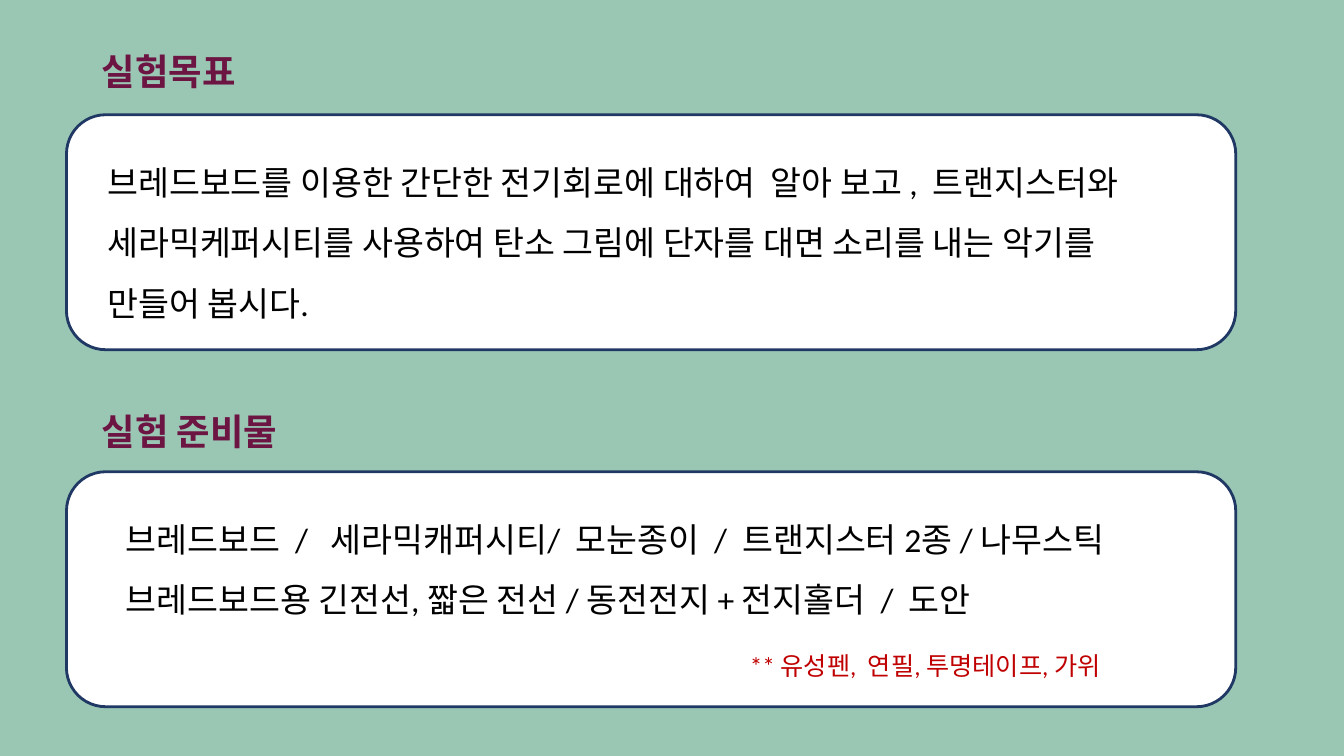
from pptx import Presentation
from pptx.dml.color import RGBColor
from pptx.enum.shapes import MSO_SHAPE
from pptx.enum.text import MSO_ANCHOR, PP_ALIGN
from pptx.util import Pt

ROUNDED = MSO_SHAPE.ROUNDED_RECTANGLE
MIDDLE = MSO_ANCHOR.MIDDLE
LEFT = PP_ALIGN.LEFT

MINT = RGBColor(0x9A, 0xC6, 0xB4)
PLUM = RGBColor(0x6C, 0x14, 0x42)
NAVY = RGBColor(0x20, 0x38, 0x64)
WHITE = RGBColor(0xFF, 0xFF, 0xFF)
BLACK = RGBColor(0, 0, 0)
RED = RGBColor(0xC0, 0, 0)

GOAL = [
    "브레드보드를 이용한 간단한 전기회로에 대하여  알아 보고 ,  트랜지스터와",
    "세라믹케퍼시티를 사용하여 탄소 그림에 단자를 대면 소리를 내는 악기를",
    "만들어 봅시다.",
]
MATERIALS = [
    "브레드보드  /   세라믹캐퍼시티/  모눈종이  /  트랜지스터 2종 / 나무스틱",
    "브레드보드용 긴전선, 짧은 전선 / 동전전지 + 전지홀더  /  도안",
]
OWN_TOOLS = "** 유성펜,  연필, 투명테이프, 가위"


class LessonSlide:
    font_name = "Calibri"

    def __init__(self, page):
        self.page = page
        page.background.fill.solid()
        page.background.fill.fore_color.rgb = MINT

    def style(self, paragraph, size, color, bold=False):
        paragraph.alignment = LEFT
        font = paragraph.font
        font.name = self.font_name
        font.size = Pt(size)
        font.bold = bold
        font.color.rgb = color

    def heading(self, text, top, width):
        box = self.page.shapes.add_textbox(Pt(65.5), Pt(top), Pt(width), Pt(34.5))
        frame = box.text_frame
        frame.word_wrap = True
        frame.margin_left = frame.margin_right = Pt(7.2)
        frame.margin_top = frame.margin_bottom = Pt(7.2)
        frame.text = text
        self.style(frame.paragraphs[0], 26, PLUM, bold=True)

    def panel(self, lines, top, inset):
        """Draw a rounded panel holding one paragraph per line."""
        box = self.page.shapes.add_shape(ROUNDED, Pt(47.5), Pt(top), Pt(835.2), Pt(167.8))
        box.shadow.inherit = False
        box.fill.solid()
        box.fill.fore_color.rgb = WHITE
        box.line.color.rgb = NAVY
        box.line.width = Pt(2)
        frame = box.text_frame
        frame.word_wrap = True
        frame.vertical_anchor = MIDDLE
        frame.margin_left = Pt(inset)
        frame.text = "\n".join(lines)
        for paragraph in frame.paragraphs:
            paragraph.line_spacing = 1.5
            self.style(paragraph, 24, BLACK)
        return frame

    def note(self, frame, text, indent):
        """Add a small indented red line below the panel's text."""
        paragraph = frame.add_paragraph()
        paragraph.text = text
        paragraph.line_spacing = 1.5
        paragraph.space_before = Pt(11)
        self.style(paragraph, 18, RED)
        paragraph._p.get_or_add_pPr().set("marL", str(Pt(indent)))


def main():
    deck = Presentation()
    deck.slide_width, deck.slide_height = Pt(960), Pt(540)
    lesson = LessonSlide(deck.slides.add_slide(deck.slide_layouts[6]))

    lesson.heading("실험목표", top=28, width=141)
    lesson.panel(GOAL, top=82, inset=21)

    lesson.heading("실험 준비물", top=285, width=166)
    materials = lesson.panel(MATERIALS, top=337, inset=34)
    lesson.note(materials, OWN_TOOLS, indent=446)

    deck.save("out.pptx")


if __name__ == "__main__":
    main()
